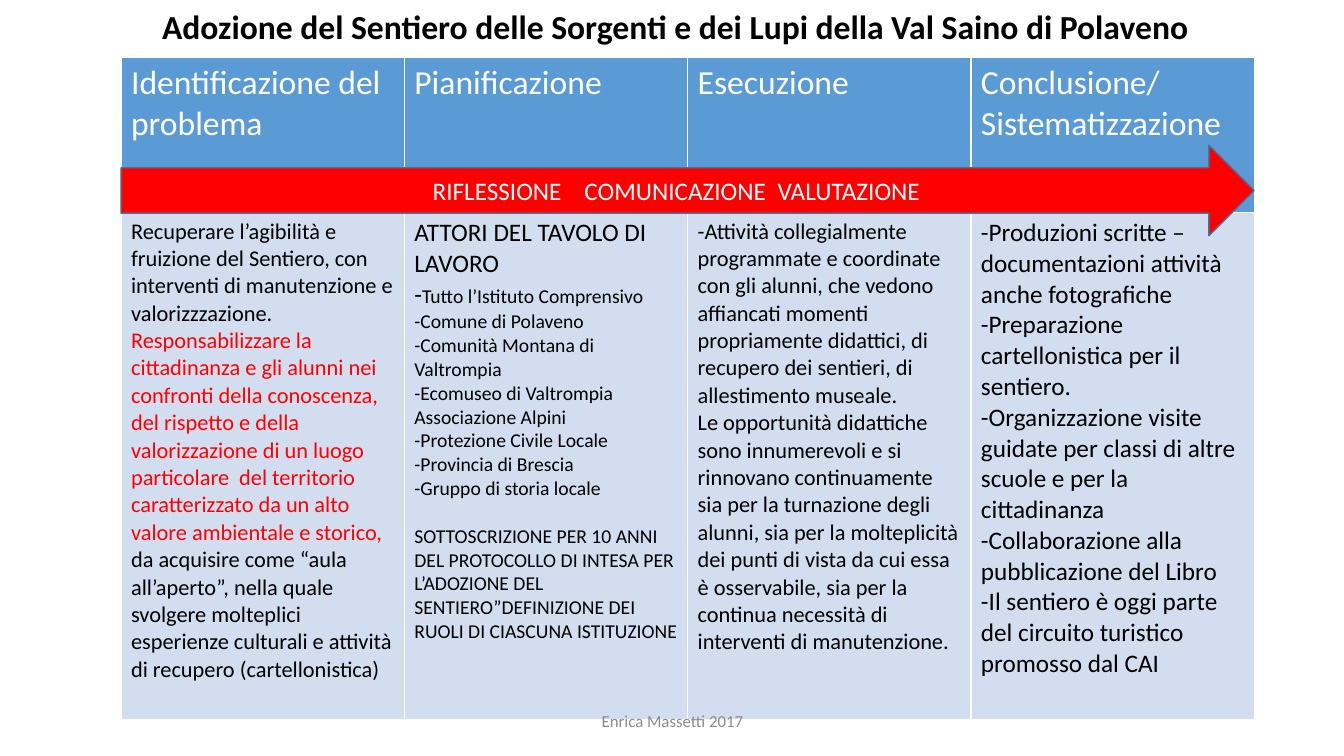
from lxml.etree import SubElement
from pptx import Presentation
from pptx.dml.color import RGBColor
from pptx.enum.shapes import MSO_SHAPE
from pptx.enum.text import MSO_ANCHOR, PP_ALIGN
from pptx.oxml.ns import qn
from pptx.util import Inches, Pt

WHITE, BLACK, RED, GREY = "FFFFFF", "000000", "FF0000", "8C8C8C"
HEADER_BLUE, BODY_BLUE, OUTLINE_BLUE = "5B9BD5", "D2DEEF", "43739E"

TITLE = "Adozione del Sentiero delle Sorgenti e dei Lupi della Val Saino di Polaveno"
ARROW_WORDS = [("RIFLESSIONE", 1220), ("COMUNICAZIONE", 410), ("VALUTAZIONE", 0)]
HEADINGS = [
    ["Identificazione del problema"],
    ["Pianificazione"],
    ["Esecuzione"],
    ["Conclusione/", "Sistematizzazione"],
]
PROBLEM = [
    ["Recuperare l’agibilità e fruizione del Sentiero, con interventi di manutenzione "
     "e valorizzzazione."],
    [("Responsabilizzare la cittadinanza e gli alunni nei confronti della conoscenza, "
      "del rispetto e della valorizzazione di un luogo particolare  del territorio "
      "caratterizzato da un alto valore ambientale e storico, ", {"color": RED}),
     "da acquisire come “aula all’aperto”, nella quale svolgere molteplici esperienze "
     "culturali e attività di recupero (cartellonistica)"],
]
PLANNING = [
    [("ATTORI DEL TAVOLO DI LAVORO", {"size": 18})],
    [("-", {"size": 18}), "Tutto l’Istituto Comprensivo"],
    ["-Comune di Polaveno"],
    ["-Comunità Montana di Valtrompia"],
    ["-Ecomuseo di Valtrompia"],
    ["Associazione Alpini"],
    ["-Protezione Civile Locale"],
    ["-Provincia di Brescia"],
    ["-Gruppo di storia locale"],
    ["SOTTOSCRIZIONE PER 10 ANNI DEL PROTOCOLLO DI INTESA PER L’ADOZIONE DEL "
     "SENTIERO”DEFINIZIONE DEI RUOLI DI CIASCUNA ISTITUZIONE"],
]
EXECUTION = [
    ["-Attività collegialmente programmate e coordinate con gli alunni, che vedono "
     "affiancati momenti propriamente didattici, di recupero dei sentieri, di "
     "allestimento museale."],
    ["Le opportunità didattiche sono innumerevoli e si rinnovano continuamente sia per "
     "la turnazione degli alunni, sia per la molteplicità dei punti di vista da cui essa "
     "è osservabile, sia per la continua necessità di interventi di manutenzione."],
]
CONCLUSION = [
    ["-Produzioni scritte – documentazioni attività anche fotografiche"],
    ["-Preparazione cartellonistica per il sentiero."],
    ["-Organizzazione visite guidate per classi di altre scuole e per la cittadinanza"],
    ["-Collaborazione alla pubblicazione del Libro"],
    ["-Il sentiero è oggi parte del circuito turistico promosso dal CAI"],
]
BODIES = [(PROBLEM, 16), (PLANNING, 14), (EXECUTION, 16), (CONCLUSION, 18)]


def rgb(value):
    """Turn a hex string into a colour."""
    return RGBColor.from_string(value)


def add_span(para, text, size, color, bold=False):
    """Add one formatted run to a paragraph."""
    span = para.add_run()
    span.text = text
    for name, value in {"name": "Calibri", "size": Pt(size), "bold": bold}.items():
        setattr(span.font, name, value)
    span.font.color.rgb = rgb(color)
    return span


def write(frame, paragraphs, size, color, bold=False, **layout):
    """Fill a text frame with paragraphs made of plain or formatted pieces."""
    frame.word_wrap = True
    for index, pieces in enumerate(paragraphs):
        para = frame.add_paragraph() if index else frame.paragraphs[0]
        for name, value in layout.items():
            setattr(para, name, value)
        for piece in pieces:
            text, changes = (piece, {}) if isinstance(piece, str) else piece
            add_span(para, text, **{"size": size, "color": color, "bold": bold, **changes})


def add_label(page, box, text, size, color, bold=False, line_spacing=1.0):
    """Place a centred line of text in a box."""
    label = page.shapes.add_textbox(*map(Inches, box))
    label.text_frame.vertical_anchor = MSO_ANCHOR.MIDDLE
    write(label.text_frame, [[text]], size, color, bold,
          alignment=PP_ALIGN.CENTER, line_spacing=line_spacing)


def style_cell(cell, fill):
    """Give a cell thin white borders and a solid fill."""
    properties = cell._tc.get_or_add_tcPr()
    for side in ("lnL", "lnR", "lnT", "lnB"):
        border = SubElement(properties, qn(f"a:{side}"), w=str(Pt(1)))
        solid = SubElement(border, qn("a:solidFill"))
        SubElement(solid, qn("a:srgbClr"), val=WHITE)
    cell.fill.solid()
    cell.fill.fore_color.rgb = rgb(fill)


def add_phases(page, box, header_height):
    """Build the table of the four project phases."""
    left, top, width, height = map(Inches, box)
    table = page.shapes.add_table(2, len(HEADINGS), left, top, width, height).table
    table.first_row = table.horz_banding = False
    table.rows[0].height = Inches(header_height)
    table.rows[1].height = height - Inches(header_height)
    for index, (heading, (body, size)) in enumerate(zip(HEADINGS, BODIES)):
        table.columns[index].width = width // len(HEADINGS)
        header_cell, body_cell = table.cell(0, index), table.cell(1, index)
        style_cell(header_cell, HEADER_BLUE)
        style_cell(body_cell, BODY_BLUE)
        write(header_cell.text_frame, [[line] for line in heading], 24, WHITE)
        write(body_cell.text_frame, body, size, BLACK)
    table.cell(1, 1).text_frame.paragraphs[-1].space_before = Pt(17)


def add_arrow(page, box):
    """Draw the red arrow with its three spaced words."""
    arrow = page.shapes.add_shape(MSO_SHAPE.RIGHT_ARROW, *map(Inches, box))
    arrow.shadow.inherit = False
    arrow.fill.solid()
    arrow.fill.fore_color.rgb = rgb(RED)
    arrow.line.color.rgb = rgb(OUTLINE_BLUE)
    arrow.line.width = Pt(1)
    arrow.text_frame.word_wrap = True
    arrow.text_frame.vertical_anchor = MSO_ANCHOR.MIDDLE
    para = arrow.text_frame.paragraphs[0]
    para.alignment = PP_ALIGN.CENTER
    for word, gap in ARROW_WORDS:
        add_span(para, word, 18, WHITE)
        if gap:
            space = add_span(para, " ", 18, WHITE)
            space._r.get_or_add_rPr().set("spc", str(gap))


def main():
    """Build and save the slide."""
    deck = Presentation()
    deck.slide_width, deck.slide_height = Inches(13.33), Inches(7.5)
    page = deck.slides.add_slide(deck.slide_layouts[6])
    add_label(page, (1.2, 0, 11, 0.57), TITLE, 24, BLACK, bold=True, line_spacing=0.9)
    add_phases(page, (1.2, 0.57, 11.24, 6.57), header_height=1.54)
    add_arrow(page, (1.2, 1.44, 11.24, 0.9))
    add_label(page, (4.42, 6.95, 4.5, 0.4), "Enrica Massetti 2017", 12, GREY)
    deck.save("out.pptx")


if __name__ == "__main__":
    main()
